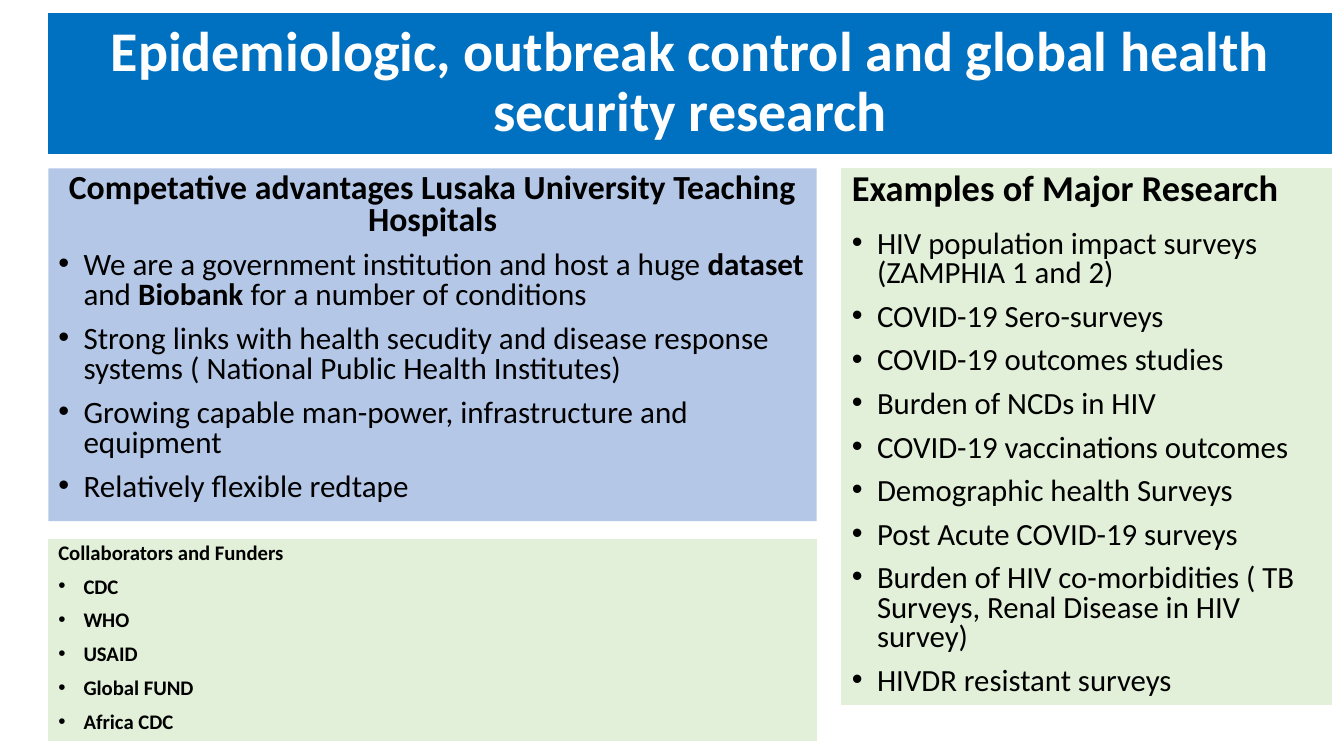
from dataclasses import dataclass

from lxml import etree
from pptx import Presentation
from pptx import util as u
from pptx.dml.color import RGBColor
from pptx.enum import shapes, text
from pptx.oxml.ns import qn

BLUE = RGBColor(0x00, 0x70, 0xC0)
PALE_BLUE = RGBColor(0xB4, 0xC7, 0xE7)
PALE_GREEN = RGBColor(0xE2, 0xF0, 0xD9)
WHITE = RGBColor(0xFF, 0xFF, 0xFF)
BLACK = RGBColor(0x00, 0x00, 0x00)

WIDTH, HEIGHT = u.Inches(13.33), u.Inches(7.5)
COLUMN, ROW = WIDTH / 100, HEIGHT / 100  # the grid has 100 columns and 100 rows
LEFT, LEFT_END, RIGHT, RIGHT_END = 3.6, 60.77, 62.64, 99.1
TOP = 22.27
HANG = u.Inches(0.25)


@dataclass(frozen=True)
class Panel:
    """A filled block; edges are in grid columns and rows, sizes in points."""
    left: float
    top: float
    right: float
    bottom: float
    fill: RGBColor
    heading: str
    heading_size: float
    items: tuple[str, ...] = ()
    item_size: float = 0
    items_bold: bool = False
    outlined: bool = True
    centred: bool = False
    colour: RGBColor = BLACK
    spacing: float = 0.8
    before: float = 10
    after: float = 0
    anchor: text.MSO_ANCHOR = text.MSO_ANCHOR.TOP


PANELS = (
    Panel(LEFT, 1.73, RIGHT_END, 20.27, BLUE,
          "Epidemiologic, outbreak control and global health security research", 40,
          centred=True, colour=WHITE, spacing=0.9, before=0, anchor=text.MSO_ANCHOR.MIDDLE),
    Panel(LEFT, TOP, LEFT_END, 68.93, PALE_BLUE,
          "Competative advantages Lusaka University Teaching Hospitals", 24.1,
          ("We are a government institution and host a huge *dataset* and *Biobank* "
           "for a number of conditions",
           "Strong links with health secudity and disease response systems "
           "( National Public Health Institutes)",
           "Growing capable man-power, infrastructure and equipment",
           "Relatively flexible redtape"), 22.2, outlined=False, centred=True),
    Panel(RIGHT, TOP, RIGHT_END, 93.2, PALE_GREEN,
          "Examples of Major Research", 26,
          ("HIV population impact surveys (ZAMPHIA 1 and 2)",
           "COVID-19 Sero-surveys",
           "COVID-19 outcomes studies",
           "Burden of NCDs in HIV",
           "COVID-19 vaccinations outcomes",
           "Demographic health Surveys",
           "Post Acute COVID-19 surveys",
           "Burden of HIV co-morbidities ( TB Surveys, Renal Disease in HIV survey)",
           "HIVDR resistant surveys"), 22, before=4, after=6),
    Panel(LEFT, 71.33, LEFT_END, 98, PALE_GREEN,
          "Collaborators and Funders", 14.8,
          ("CDC", "WHO", "USAID", "Global FUND", "Africa CDC"), 14.8, items_bold=True),
)


def style(paragraph, size: float, bold: bool, colour: RGBColor, spacing: float,
          before: float) -> None:
    paragraph.font.name = "Calibri"
    paragraph.font.size = u.Pt(size)
    paragraph.font.bold = bold
    paragraph.font.color.rgb = colour
    paragraph.line_spacing = spacing
    paragraph.space_before = u.Pt(before)


def add_bullet(paragraph) -> None:
    properties = paragraph._p.get_or_add_pPr()
    properties.set("marL", str(HANG))
    properties.set("indent", str(-HANG))
    font = etree.Element(qn("a:buFont"), typeface="Arial")
    mark = etree.Element(qn("a:buChar"), char="•")
    defaults = properties.find(qn("a:defRPr"))
    defaults.addprevious(font)
    defaults.addprevious(mark)


def add_item(frame, item: str, panel: Panel) -> None:
    """Adds a bulleted paragraph; words between asterisks are bold."""
    paragraph = frame.add_paragraph()
    paragraph.alignment = text.PP_ALIGN.LEFT
    style(paragraph, panel.item_size, panel.items_bold, panel.colour, panel.spacing, 10)
    add_bullet(paragraph)
    for index, words in enumerate(item.split("*")):
        run = paragraph.add_run()
        run.text = words
        if index % 2:
            run.font.bold = True


def add_panel(slide, panel: Panel) -> None:
    block = slide.shapes.add_shape(
        shapes.MSO_SHAPE.RECTANGLE,
        round(panel.left * COLUMN), round(panel.top * ROW),
        round((panel.right - panel.left) * COLUMN), round((panel.bottom - panel.top) * ROW))
    block.shadow.inherit = False
    block.fill.solid()
    block.fill.fore_color.rgb = panel.fill
    if panel.outlined:
        block.line.color.rgb = panel.fill
        block.line.width = u.Pt(0.75)
    else:
        block.line.fill.background()

    frame = block.text_frame
    frame.word_wrap = True
    frame.vertical_anchor = panel.anchor
    heading = frame.paragraphs[0]
    heading.text = panel.heading
    heading.alignment = text.PP_ALIGN.CENTER if panel.centred else text.PP_ALIGN.LEFT
    style(heading, panel.heading_size, True, panel.colour, panel.spacing, panel.before)
    heading.space_after = u.Pt(panel.after)
    for item in panel.items:
        add_item(frame, item, panel)


def main() -> None:
    deck = Presentation()
    deck.slide_width, deck.slide_height = WIDTH, HEIGHT
    slide = deck.slides.add_slide(deck.slide_layouts[6])
    for panel in PANELS:
        add_panel(slide, panel)
    deck.save("out.pptx")


if __name__ == "__main__":
    main()
